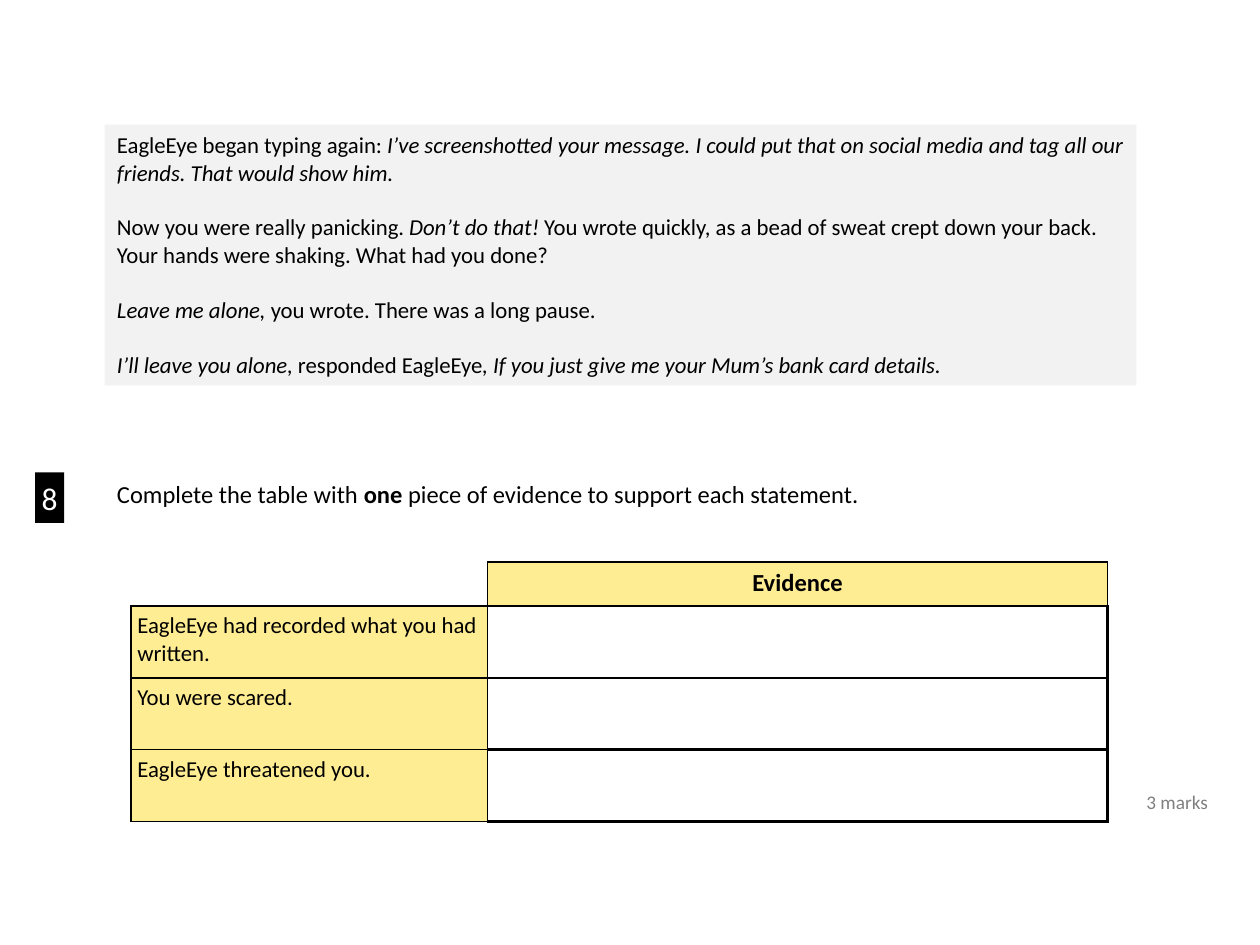
from dataclasses import dataclass
from typing import Optional

from lxml.etree import SubElement
from pptx import Presentation
from pptx.dml.color import RGBColor
from pptx.enum.shapes import MSO_SHAPE as SHAPE
from pptx.enum.text import MSO_ANCHOR as ANCHOR, PP_ALIGN as ALIGN
from pptx.oxml.ns import qn
from pptx.util import Pt

PX = 9144  # EMU in one px, 100 px to the inch
FONT = "Calibri"
COLORS = {
    "text": "000000",
    "white": "FFFFFF",
    "passage": "F2F2F2",
    "heading": "FFED93",
    "marks": "7F7F7F",
}
Run = tuple[str, str]  # text and style: "", "bold" or "italic"


@dataclass
class Box:
    left: int
    top: int
    width: int
    height: int
    paragraphs: list[list[Run]]
    size: int
    color: str = "text"
    fill: Optional[str] = None
    inset: int = 10
    gap: float = 0
    anchor: ANCHOR = ANCHOR.TOP


PASSAGE = [
    [("EagleEye began typing again: ", ""),
     ("I’ve screenshotted your message. I could put that on social media and "
      "tag all our friends. That would show him.", "italic")],
    [("Now you were really panicking. ", ""), ("Don’t do that! ", "italic"),
     ("You wrote quickly, as a bead of sweat crept down your back. "
      "Your hands were shaking. What had you done?", "")],
    [("Leave me alone, ", "italic"), ("you wrote. There was a long pause.", "")],
    [("I’ll leave you alone,", "italic"), (" responded EagleEye", ""),
     (", If you just give me your Mum’s bank card details.", "italic")],
]
QUESTION = [[("Complete the table with ", ""), ("one ", "bold"),
             ("piece of evidence to support each statement.", "")]]
BOXES = [
    Box(83, 99, 819, 207, PASSAGE, 13, fill="passage", gap=15.8),
    Box(83, 375, 740, 81, QUESTION, 14),
    Box(28, 375, 23, 40, [[("8", "")]], 18, "white", "text", 5,
        anchor=ANCHOR.MIDDLE),
    Box(900, 622, 74, 29, [[("3 marks", "")]], 11, "marks"),
]
STATEMENTS = [
    "EagleEye had recorded what you had written.",
    "You were scared.",
    "EagleEye threatened you.",
]


def rgb(name: str) -> RGBColor:
    return RGBColor.from_string(COLORS[name])


def add_runs(p, runs: list[Run], size: int, color: str) -> None:
    for text, style in runs:
        r = p.add_run()
        r.text = text
        r.font.color.rgb = rgb(color)
        for name, value in {"name": FONT, "size": Pt(size),
                            "bold": style == "bold",
                            "italic": style == "italic"}.items():
            setattr(r.font, name, value)


def draw_box(slide, box: Box) -> None:
    place = [n * PX for n in (box.left, box.top, box.width, box.height)]
    if box.fill:
        sp = slide.shapes.add_shape(SHAPE.RECTANGLE, *place)
        sp.shadow.inherit = False
        sp.fill.solid()
        sp.fill.fore_color.rgb = rgb(box.fill)
        sp.line.fill.background()
    else:
        sp = slide.shapes.add_textbox(*place)
    tf = sp.text_frame
    for name, value in {"word_wrap": True, "vertical_anchor": box.anchor,
                        "margin_left": box.inset * PX,
                        "margin_right": box.inset * PX,
                        "margin_top": 5 * PX, "margin_bottom": 5 * PX}.items():
        setattr(tf, name, value)
    for i, runs in enumerate(box.paragraphs):
        p = tf.add_paragraph() if i else tf.paragraphs[0]
        p.alignment = ALIGN.LEFT
        if i and box.gap:
            p.space_before = Pt(box.gap)
        add_runs(p, runs, box.size, box.color)


def set_borders(cell, edges: dict[str, tuple[str, float]]) -> None:
    tc_pr = cell._tc.get_or_add_tcPr()
    for edge in "LRTB":
        color, width = edges[edge]
        ln = SubElement(tc_pr, qn(f"a:ln{edge}"), w=str(Pt(width)))
        fill = SubElement(ln, qn("a:solidFill"))
        SubElement(fill, qn("a:srgbClr"), val=COLORS[color])


def fill_cell(cell, text: str, size: int = 13, style: str = "",
              align: ALIGN = ALIGN.LEFT) -> None:
    inset = 5 * PX if text else 0
    for side in ("left", "right", "top", "bottom"):
        setattr(cell, f"margin_{side}", inset)
    if not text:
        cell.fill.background()
        return
    cell.fill.solid()
    cell.fill.fore_color.rgb = rgb("heading")
    p = cell.text_frame.paragraphs[0]
    p.alignment = align
    add_runs(p, [(text, style)], size, "text")


def draw_table(slide) -> None:
    widths, heights = [283, 492], [35] + [57] * len(STATEMENTS)
    table = slide.shapes.add_table(
        len(heights), len(widths), 104 * PX, 446 * PX,
        sum(widths) * PX, sum(heights) * PX).table
    table.first_row = table.horz_banding = False
    for column, width in zip(table.columns, widths):
        column.width = width * PX
    for row, height in zip(table.rows, heights):
        row.height = height * PX

    thin, thick, hidden = ("text", 1), ("text", 1.5), ("white", 1.5)
    ruled = dict.fromkeys("LRTB", thin)
    set_borders(table.cell(0, 0), ruled | {"L": hidden, "T": hidden})
    set_borders(table.cell(0, 1), ruled)
    fill_cell(table.cell(0, 0), "")
    fill_cell(table.cell(0, 1), "Evidence", 14, "bold", ALIGN.CENTER)
    for i, statement in enumerate(STATEMENTS, start=1):
        label, answer = table.cell(i, 0), table.cell(i, 1)
        set_borders(label, ruled)
        set_borders(answer, ruled | {"R": thick, "B": thick,
                                     "T": thin if i == 1 else thick})
        fill_cell(label, statement)
        fill_cell(answer, "")


def main() -> None:
    prs = Presentation()
    prs.slide_width, prs.slide_height = 1000 * PX, 750 * PX
    slide = prs.slides.add_slide(prs.slide_layouts[6])
    for box in BOXES:
        draw_box(slide, box)
    draw_table(slide)
    prs.save("out.pptx")


if __name__ == "__main__":
    main()
